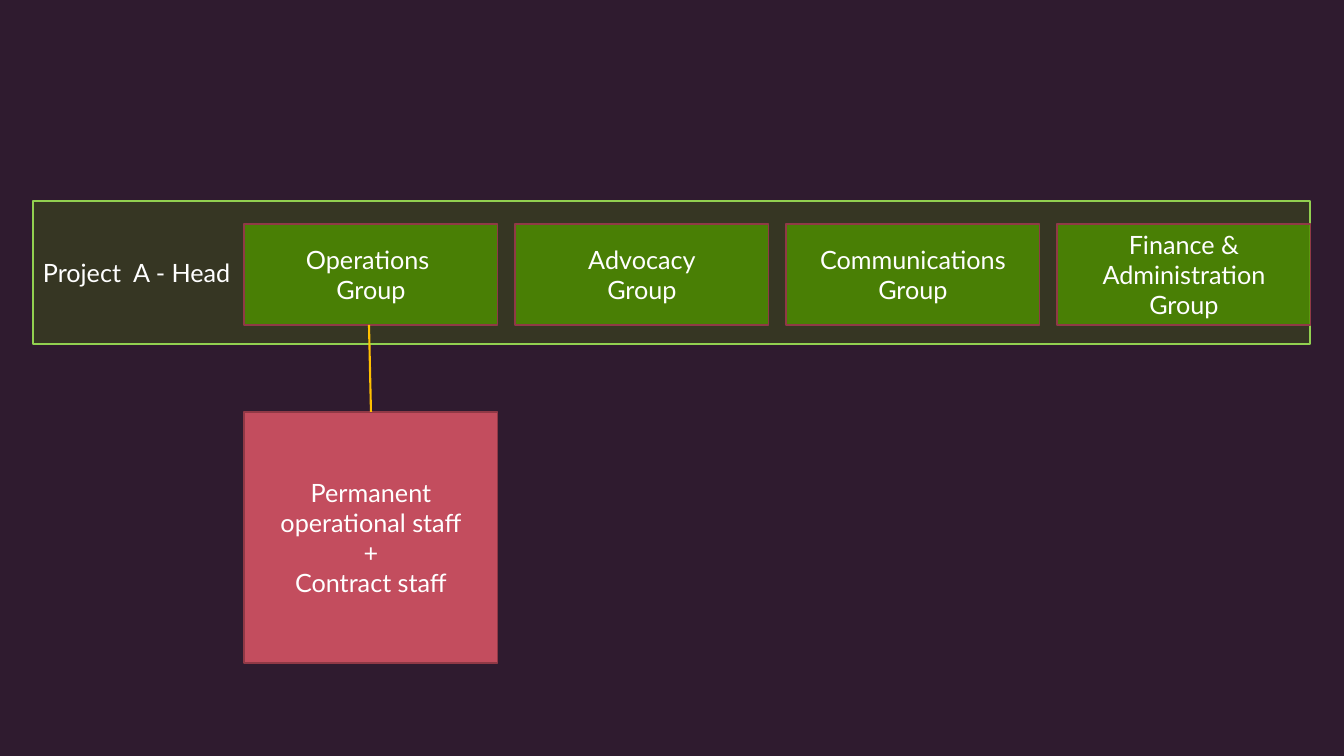
from lxml import etree
from pptx import Presentation, util as u
from pptx.dml.color import RGBColor
from pptx.enum import shapes, text
from pptx.oxml import ns

WHITE, NIGHT, GREEN, LIME = "FFFFFF", "2F1B2F", "4E8F00", "92D050"
ROSE, WINE, AMBER = "C34D5E", "903946", "FFC000"


def px(count):
    return u.Emu(round(count * 914400 / 100.8))


def paint(target, colour, opacity=100):
    target.solid()
    target.fore_color.rgb = RGBColor.from_string(colour)
    if opacity < 100:
        swatch = target._xPr.find(".//" + ns.qn("a:srgbClr"))
        etree.SubElement(swatch, ns.qn("a:alpha"), val=str(opacity * 1000))


def write(frame, wording, size=18, font="Lato", colour=WHITE,
          align=text.PP_ALIGN.CENTER):
    frame.word_wrap = True
    frame.vertical_anchor = text.MSO_ANCHOR.MIDDLE
    for index, line in enumerate(wording.split("\n")):
        para = frame.add_paragraph() if index else frame.paragraphs[0]
        para.alignment = align
        span = para.add_run()
        span.text = line
        span.font.size = u.Pt(size)
        span.font.name = font
        paint(span.font.fill, colour)


class Chart:
    """Draws the organisation chart's elements on one page in one style."""

    def __init__(self, deck, background):
        self.page = deck.slides.add_slide(deck.slide_layouts[6])
        self.outline = u.Pt(0.85)
        paint(self.page.background.fill, background)

    def box(self, left, top, width, height, wording, fill, opacity=100,
            line=WINE, **style):
        box = self.page.shapes.add_shape(
            shapes.MSO_SHAPE.RECTANGLE, px(left), px(top), px(width), px(height))
        box.shadow.inherit = False
        paint(box.fill, fill, opacity)
        paint(box.line.fill, line)
        box.line.width = self.outline
        write(box.text_frame, wording, **style)
        return box

    def link(self, left, top, target, colour, width):
        link = self.page.shapes.add_connector(
            shapes.MSO_CONNECTOR.STRAIGHT, px(left), px(top), px(left), px(top))
        link.end_connect(target, 0)
        paint(link.line.fill, colour)
        link.line.width = u.Pt(width)
        etree.SubElement(link._element.spPr, ns.qn("a:effectLst"))


def main():
    deck = Presentation()
    deck.slide_width, deck.slide_height = px(1344), px(756)
    chart = Chart(deck, NIGHT)
    chart.box(33, 201, 1277, 143, "Project  A - Head", GREEN, 24, LIME,
              align=text.PP_ALIGN.LEFT)
    groups = ["Operations \nGroup", "Advocacy\nGroup", "Communications\nGroup",
              "Finance & Administration Group"]
    for column, group in enumerate(groups):
        chart.box(244 + 271 * column, 224, 254, 101, group, GREEN, 83)
    staff = chart.box(244, 412, 254, 251,
                      "Permanent operational staff\n+\nContract staff", ROSE)
    chart.link(369, 325, staff, AMBER, 1.5)
    deck.save("out.pptx")


if __name__ == "__main__":
    main()
